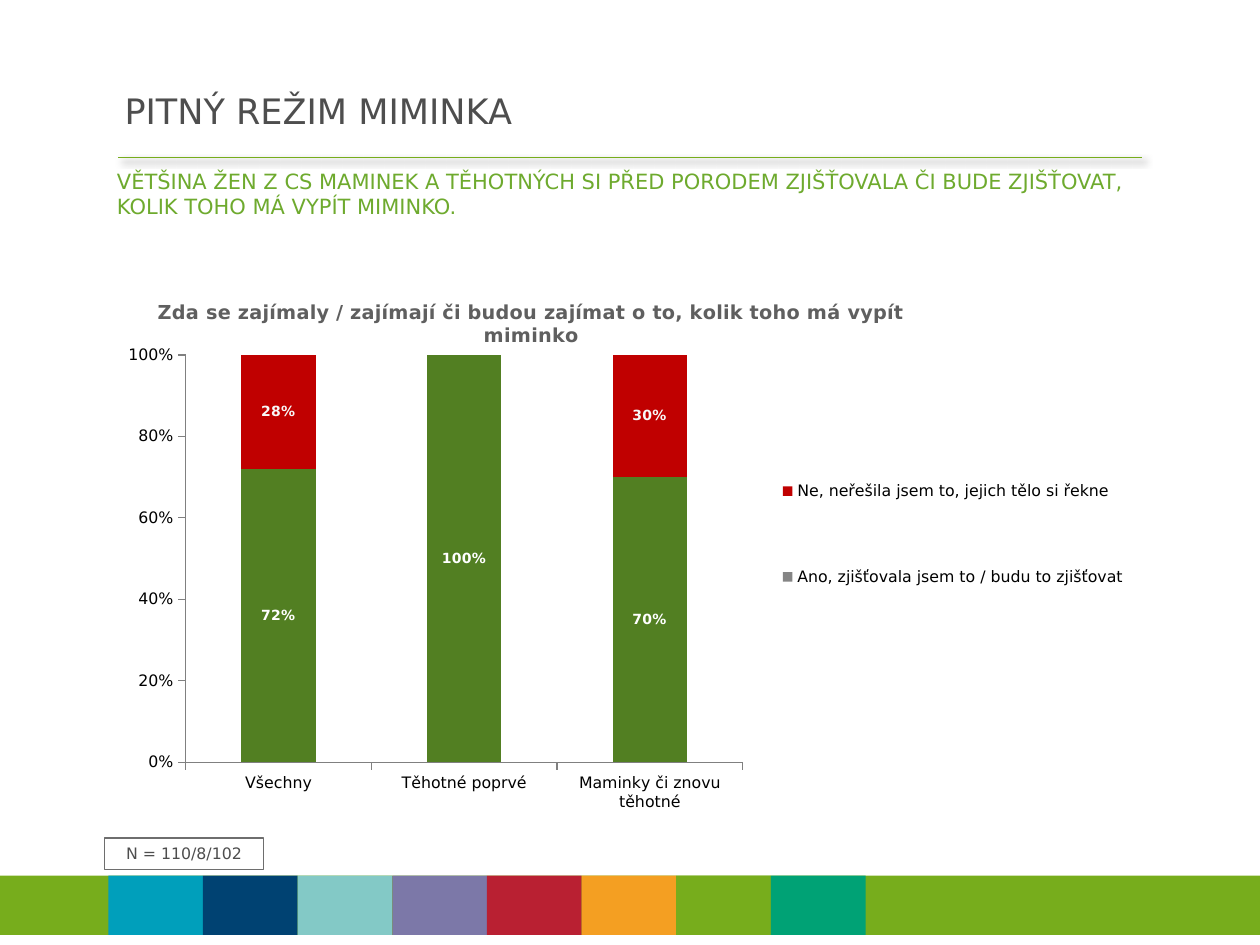
from dataclasses import dataclass

import pptx
import pptx.chart.data
import pptx.dml.color
import pptx.enum.chart
import pptx.enum.shapes
import pptx.enum.text
import pptx.oxml
import pptx.oxml.ns
import pptx.util

Inches = pptx.util.Inches
Pt = pptx.util.Pt
qn = pptx.oxml.ns.qn
FONT = "DejaVu Sans"
COLORS = {
    "green": "77AD1C", "cyan": "009FBB", "navy": "004272", "aqua": "83C9C6",
    "violet": "7C78A8", "crimson": "B92032", "orange": "F49F22", "teal": "00A275",
    "text": "4E4E4E", "lead": "6EAA2E", "border": "6E6E6E", "heading": "5F5F5F",
    "key": "858585", "yes": "527F22", "no": "C00000", "axis": "808080",
    "black": "000000", "white": "FFFFFF", "light": "F8F8F8",
}


@dataclass
class Band:
    left: float
    width: float
    color: str


@dataclass
class Answer:
    name: str
    values: tuple
    color: str
    label_color: str


ANSWERS = [
    Answer("Ano, zjišťovala jsem to / budu to zjišťovat", (0.72, 1, 0.7), "key", "white"),
    Answer("Ne, neřešila jsem to, jejich tělo si řekne", (0.28, None, 0.3), "no", "light"),
]
CATEGORIES = ["Všechny", "Těhotné poprvé", "Maminky či znovu těhotné"]
STRIPES = ["cyan", "navy", "aqua", "violet", "crimson", "orange", "green", "teal"]
STRIPES_LEFT, STRIPES_RIGHT = 0.86, 6.87


def rgb(name: str):
    return pptx.dml.color.RGBColor.from_string(COLORS[name])


def set_font(font, size: float, color: str, bold: bool = False) -> None:
    font.name = FONT
    font.size = Pt(size)
    font.bold = bold
    font.color.rgb = rgb(color)


def add_text(s, text: str, *, at: tuple, size: float, color: str, border: str = "",
             align: str = "LEFT", anchor: str = "TOP", after: float = 0):
    sp = s.shapes.add_textbox(*map(Inches, at))
    if border:
        sp.line.color.rgb = rgb(border)
        sp.line.width = Pt(0.75)
    tf = sp.text_frame
    tf.word_wrap = True
    tf.vertical_anchor = pptx.enum.text.MSO_ANCHOR[anchor]
    p = tf.paragraphs[0]
    p.alignment = pptx.enum.text.PP_ALIGN[align]
    p.space_after = Pt(after)
    r = p.add_run()
    r.text = text
    set_font(r.font, size, color)
    return sp


def add_band(s, band: Band) -> None:
    sp = s.shapes.add_shape(pptx.enum.shapes.MSO_SHAPE.RECTANGLE, Inches(band.left),
                            Inches(6.95), Inches(band.width), Inches(0.47))
    sp.shadow.inherit = False
    sp.fill.solid()
    sp.fill.fore_color.rgb = rgb(band.color)
    sp.line.fill.background()


def add_rule(s) -> None:
    line = s.shapes.add_connector(pptx.enum.shapes.MSO_CONNECTOR.STRAIGHT, Inches(0.94),
                                  Inches(1.25), Inches(9.06), Inches(1.25))
    line.line.color.rgb = rgb("green")
    line.line.width = Pt(0.75)
    line._element.spPr.append(pptx.oxml.parse_xml(
        f'<a:effectLst {pptx.oxml.ns.nsdecls("a")}>'
        f'<a:outerShdw blurRad="{Pt(4)}" dist="{Pt(3)}" dir="2700000" rotWithShape="0">'
        f'<a:srgbClr val="{COLORS["black"]}"><a:alpha val="40000"/></a:srgbClr>'
        '</a:outerShdw></a:effectLst>'))


def place(element, index: int, x: float, y: float, w: float = 0, h: float = 0,
          inner: bool = False) -> None:
    for old in element.findall(qn("c:layout")):
        element.remove(old)
    parts = '<c:layoutTarget val="inner"/>' if inner else ""
    parts += '<c:xMode val="edge"/><c:yMode val="edge"/>'
    sizes = {"x": x, "y": y, "w": w, "h": h}
    parts += "".join(f'<c:{k} val="{v}"/>' for k, v in sizes.items() if v)
    element.insert(index, pptx.oxml.parse_xml(
        f'<c:layout {pptx.oxml.ns.nsdecls("c")}>'
        f'<c:manualLayout>{parts}</c:manualLayout></c:layout>'))


def style_axis(axis) -> None:
    axis.has_major_gridlines = False
    axis.major_tick_mark = pptx.enum.chart.XL_TICK_MARK.OUTSIDE
    axis.format.line.color.rgb = rgb("axis")
    axis.format.line.width = Pt(0.75)
    set_font(axis.tick_labels.font, 9, "black")


def add_answers_chart(s) -> None:
    data = pptx.chart.data.CategoryChartData(number_format="0%")
    data.categories = CATEGORIES
    for answer in ANSWERS:
        data.add_series(answer.name, answer.values)
    chart = s.shapes.add_chart(pptx.enum.chart.XL_CHART_TYPE.COLUMN_STACKED, Inches(0.89),
                               Inches(2.3), Inches(8.34), Inches(4.31), data).chart
    set_font(chart.font, 18, "black")

    chart.has_title = True
    p = chart.chart_title.text_frame.paragraphs[0]
    r = p.add_run()
    r.text = "Zda se zajímaly / zajímají či budou zajímat o to, kolik toho má vypít miminko"
    set_font(r.font, 11, "heading", bold=True)
    place(chart.chart_title._element, 1, 0.04, 0.01)

    chart.has_legend = True
    legend = chart.legend
    legend.position = pptx.enum.chart.XL_LEGEND_POSITION.RIGHT
    legend.include_in_layout = False
    set_font(legend.font, 9, "black")
    place(legend._element, 1, 0.61, 0.23, 0.38, 0.44)

    style_axis(chart.category_axis)
    axis = chart.value_axis
    style_axis(axis)
    axis.minimum_scale, axis.maximum_scale, axis.major_unit = 0, 1, 0.2
    axis.tick_labels.number_format = "###0%"
    axis.tick_labels.number_format_is_linked = False

    plot = chart.plots[0]
    plot.vary_by_categories = False
    plot.gap_width, plot.overlap = 150, 100
    place(chart._chartSpace.chart.plotArea, 0, 0.07, 0.12, 0.53, 0.75, inner=True)
    for answer, series in zip(ANSWERS, plot.series):
        series.format.fill.solid()
        series.format.fill.fore_color.rgb = rgb(answer.color)
        labels = series.data_labels
        labels.show_value = True
        labels.number_format = "0%"
        labels.number_format_is_linked = False
        set_font(labels.font, 8, answer.label_color, bold=True)
    for i in range(len(CATEGORIES)):
        fill = plot.series[0].points[i].format.fill
        fill.solid()
        fill.fore_color.rgb = rgb("yes")


def main() -> None:
    prs = pptx.Presentation()
    prs.slide_width, prs.slide_height = Inches(10), Inches(7.5)
    s = prs.slides.add_slide(prs.slide_layouts[6])
    add_rule(s)
    pitch = (STRIPES_RIGHT - STRIPES_LEFT) / len(STRIPES)
    add_band(s, Band(0, 10, "green"))
    for i, color in enumerate(STRIPES):
        add_band(s, Band(STRIPES_LEFT + i * pitch, pitch, color))
    add_text(s, "PITNÝ REŽIM MIMINKA", at=(0.89, 0.62, 8.87, 0.51), size=20,
             color="text", anchor="MIDDLE", after=3)
    add_text(s, "VĚTŠINA ŽEN Z CS MAMINEK A TĚHOTNÝCH SI PŘED PORODEM ZJIŠŤOVALA "
             "ČI BUDE ZJIŠŤOVAT, KOLIK TOHO MÁ VYPÍT MIMINKO.",
             at=(0.83, 1.29, 8.35, 0.55), size=12, color="lead")
    add_text(s, "N = 110/8/102", at=(0.83, 6.65, 1.26, 0.25), size=9, color="text",
             border="border", align="CENTER")
    add_answers_chart(s)
    prs.save("out.pptx")


if __name__ == "__main__":
    main()
